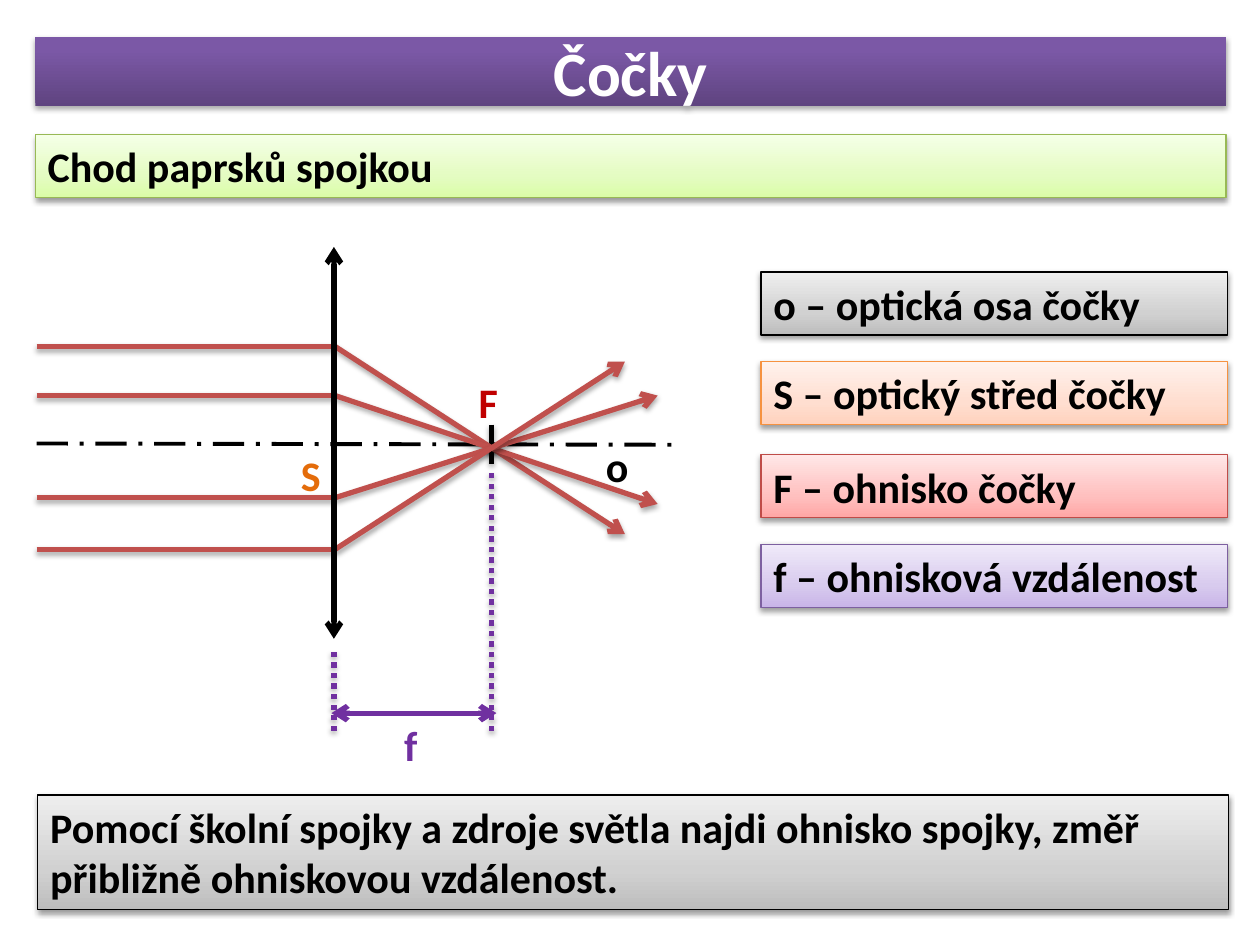
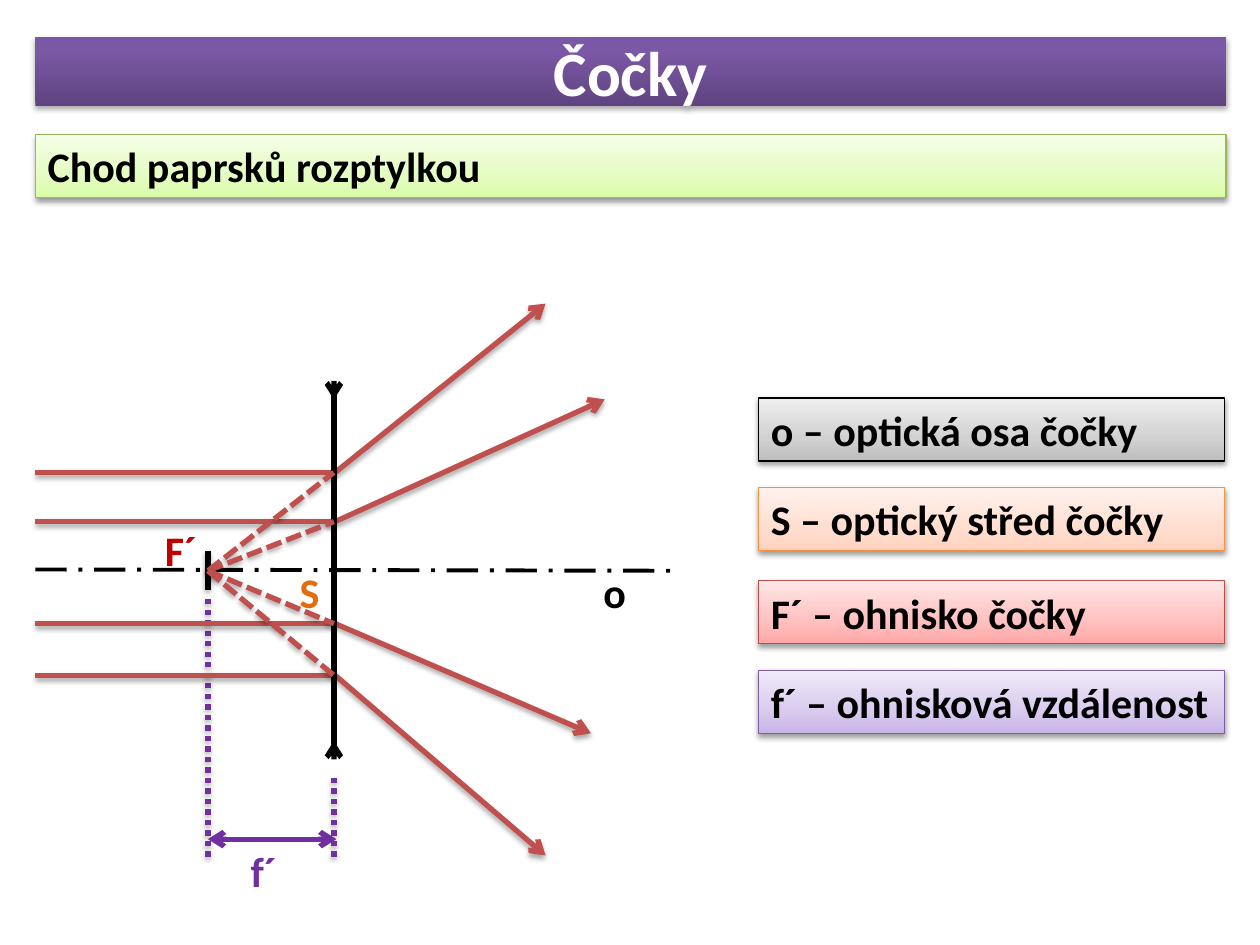
"""Build two slides on how rays pass through converging and diverging lenses."""
from pptx import Presentation
from pptx.dml.color import RGBColor
from pptx.enum.dml import MSO_LINE
from pptx.enum.shapes import MSO_CONNECTOR, MSO_SHAPE
from pptx.enum.text import MSO_ANCHOR, PP_ALIGN
from pptx.oxml import parse_xml
from pptx.oxml.ns import nsdecls, qn
from pptx.util import Inches, Pt

BLACK = RGBColor(0x00, 0x00, 0x00)
WHITE = RGBColor(0xFF, 0xFF, 0xFF)
RAY_RED = RGBColor(0xC0, 0x50, 0x4D)
FOCUS_RED = RGBColor(0xC0, 0x00, 0x00)
CENTRE_ORANGE = RGBColor(0xE4, 0x6C, 0x0A)
LENGTH_PURPLE = RGBColor(0x70, 0x30, 0xA0)
GREEN_EDGE = RGBColor(0x98, 0xB9, 0x55)
ORANGE_EDGE = RGBColor(0xF6, 0x92, 0x40)
RED_EDGE = RGBColor(0xBF, 0x4C, 0x48)
PURPLE_EDGE = RGBColor(0x7D, 0x60, 0xA0)


def gradient(middle, *colours):
    """Pair three colours, bottom to top, with their stops."""
    return list(zip((0, middle, 100), map(RGBColor.from_string, colours)))


TITLE_STYLE = (gradient(80, "5F4480", "7B58A6", "7C57A8"), None)
GREEN_STYLE = (gradient(35, "DAFDA7", "E4FCC2", "F5FFE7"), GREEN_EDGE)
GREY_STYLE = (gradient(35, "BDBDBD", "D1D1D1", "EEEEEE"), BLACK)
ORANGE_STYLE = (gradient(35, "FFD2BD", "FFDED0", "FFF2ED"), ORANGE_EDGE)
RED_STYLE = (gradient(35, "FFA6A5", "FFC0BF", "FFE7E7"), RED_EDGE)
PURPLE_STYLE = (gradient(35, "C9B5E8", "D8CBEE", "F0EAF9"), PURPLE_EDGE)

FONT = "Calibri"
TITLE = "Čočky"
BAND_LEFT, BAND_WIDTH = 0.28, 9.45
LENS_X = 2.65
RAY_OFFSETS = (-0.77, -0.38, 0.43, 0.84)
LEGEND_ROWS = (
    (-1.36, GREY_STYLE), (-0.65, ORANGE_STYLE),
    (0.09, RED_STYLE), (0.8, PURPLE_STYLE),
)

LENSES = [
    {
        "heading": "Chod paprsků spojkou",
        "axis_y": 3.52, "left": 0.29, "axis_end": 5.41, "focus_x": 3.9,
        "legend_left": 6.04,
        "legend": ("o – optická osa čočky", "S – optický střed čočky",
                   "F – ohnisko čočky", "f – ohnisková vzdálenost"),
        "backed_labels": [("S", 2.29, 3.52, CENTRE_ORANGE),
                          ("f", 3.11, 5.66, LENGTH_PURPLE)],
        "clear_labels": [("F", 3.7, 2.94, FOCUS_RED), ("o", 4.71, 3.45, BLACK)],
        "ray_tips": [(4.96, 4.24), (5.22, 4), (5.22, 3.14), (4.96, 2.87)],
        "virtual_rays": False,
        "length_ends": (2.63, 3.94),
        "lens_lines": [(5.07, 1.96, "both")],
        "task": "Pomocí školní spojky a zdroje světla najdi ohnisko spojky, "
                "změř přibližně ohniskovou vzdálenost.",
    },
    {
        "heading": "Chod paprsků rozptylkou",
        "axis_y": 4.52, "left": 0.28, "axis_end": 5.39, "focus_x": 1.65,
        "legend_left": 6.02,
        "legend": ("o – optická osa čočky", "S – optický střed čočky",
                   "F´ – ohnisko čočky", "f´ – ohnisková vzdálenost"),
        "backed_labels": [("S", 2.28, 4.45, CENTRE_ORANGE),
                          ("f´", 1.89, 6.66, LENGTH_PURPLE)],
        "clear_labels": [("F´", 1.21, 4.11, FOCUS_RED), ("o", 4.69, 4.45, BLACK)],
        "ray_tips": [(4.33, 2.41), (4.8, 3.17), (4.69, 5.82), (4.33, 6.79)],
        "virtual_rays": True,
        "length_ends": (1.65, 2.67),
        "lens_lines": [(5.92, 3.13, None), (3.09, 3.17, "end"), (5.97, 5.88, "end")],
        "task": None,
    },
]


def set_effects(item, shadow, alpha=35, distance=1.8):
    """Give an item a soft shadow below it, or none at all."""
    properties = item._element.spPr
    for effects in properties.findall(qn("a:effectLst")):
        properties.remove(effects)
    inner = (
        f'<a:outerShdw blurRad="{Pt(3.1)}" dist="{Pt(distance)}" dir="5400000" '
        f'rotWithShape="0"><a:srgbClr val="{BLACK}"><a:alpha val="{alpha * 1000}"/>'
        "</a:srgbClr></a:outerShdw>"
    ) if shadow else ""
    properties.append(parse_xml(f'<a:effectLst {nsdecls("a")}>{inner}</a:effectLst>'))


def write(box, text, colour=BLACK, size=24, align=PP_ALIGN.LEFT,
          anchor=MSO_ANCHOR.TOP):
    """Fill a box with one bold paragraph."""
    frame = box.text_frame
    frame.word_wrap = True
    frame.vertical_anchor = anchor
    para = frame.paragraphs[0]
    para.alignment = align
    span = para.add_run()
    span.text = text
    span.font.name, span.font.size, span.font.bold = FONT, Pt(size), True
    span.font.color.rgb = colour


def add_panel(page, text, left, top, width, height, style, **text_format):
    """Add a gradient rectangle with a shadow and text."""
    stops, edge = style
    box = page.shapes.add_shape(MSO_SHAPE.RECTANGLE, Inches(left), Inches(top),
                                Inches(width), Inches(height))
    box.fill.gradient()
    stop_xml = "".join(
        f'<a:gs pos="{place * 1000}"><a:srgbClr val="{colour}"/></a:gs>'
        for place, colour in stops)
    properties = box._element.spPr
    properties.replace(properties.find(qn("a:gradFill")), parse_xml(
        f'<a:gradFill {nsdecls("a")} rotWithShape="1"><a:gsLst>{stop_xml}</a:gsLst>'
        '<a:lin ang="16200000" scaled="0"/></a:gradFill>'))
    if edge is None:
        box.line.fill.background()
        set_effects(box, True)
    else:
        box.line.color.rgb = edge
        box.line.width = Pt(0.75)
        set_effects(box, True, alpha=38, distance=1.6)
    write(box, text, **text_format)


def add_label(page, text, left, top, colour, backed):
    """Add a one-letter label, on white when backed."""
    box = page.shapes.add_textbox(Inches(left), Inches(top), Inches(0.51), Inches(0.5))
    if backed:
        box.fill.solid()
        box.fill.fore_color.rgb = WHITE
    write(box, text, colour)


def add_line(page, start, end, colour, width=3, dash=None, arrows=None, shadow=True):
    """Draw a straight line; arrows is None, "end" or "both"."""
    line = page.shapes.add_connector(MSO_CONNECTOR.STRAIGHT,
                                     *map(Inches, (*start, *end)))
    line.line.color.rgb = colour
    line.line.width = Pt(width)
    if dash is not None:
        line.line.dash_style = dash
    tags = {None: (), "end": ("tailEnd",), "both": ("headEnd", "tailEnd")}[arrows]
    for tag in tags:
        line.line._get_or_add_ln().append(
            parse_xml(f'<a:{tag} {nsdecls("a")} type="arrow"/>'))
    set_effects(line, shadow)


def draw_lens(page, lens):
    """Draw the axis, focus, rays, lens and focal length."""
    axis_y, left, focus_x = lens["axis_y"], lens["left"], lens["focus_x"]
    ray_heights = [axis_y + offset for offset in RAY_OFFSETS]

    add_line(page, (left, axis_y), (lens["axis_end"], axis_y + 0.01), BLACK,
             width=2.25, dash=MSO_LINE.LONG_DASH_DOT, shadow=False)
    add_line(page, (focus_x, axis_y - 0.15), (focus_x, axis_y + 0.16), BLACK)
    for x, top in ((LENS_X, 1.62), (focus_x, 0.2)):
        add_line(page, (x, axis_y + 2.28), (x, axis_y + top), LENGTH_PURPLE,
                 dash=MSO_LINE.ROUND_DOT)
    for height, tip in zip(ray_heights, lens["ray_tips"]):
        add_line(page, (LENS_X + 0.01, height), tip, RAY_RED, arrows="end")
    length_start, length_end = lens["length_ends"]
    add_line(page, (length_start, axis_y + 2.14), (length_end, axis_y + 2.14),
             LENGTH_PURPLE, arrows="both", shadow=False)
    for height in ray_heights:
        add_line(page, (left, height), (LENS_X, height), RAY_RED)
    for start, end, arrows in lens["lens_lines"]:
        add_line(page, (LENS_X, start), (LENS_X, end), BLACK,
                 arrows=arrows, shadow=False)
    if lens["virtual_rays"]:
        for height in ray_heights:
            add_line(page, (focus_x, axis_y + 0.01), (LENS_X, height), RAY_RED,
                     dash=MSO_LINE.SQUARE_DOT)


def build_page(deck, lens):
    """Add one slide for one kind of lens."""
    page = deck.slides.add_slide(deck.slide_layouts[6])
    for label in lens["backed_labels"]:
        add_label(page, *label, backed=True)
    add_panel(page, TITLE, BAND_LEFT, 0.29, BAND_WIDTH, 0.55, TITLE_STYLE,
              colour=WHITE, size=36, align=PP_ALIGN.CENTER, anchor=MSO_ANCHOR.MIDDLE)
    add_panel(page, lens["heading"], BAND_LEFT, 1.07, BAND_WIDTH, 0.5, GREEN_STYLE)
    draw_lens(page, lens)
    for label in lens["clear_labels"]:
        add_label(page, *label, backed=False)
    for text, (offset, style) in zip(lens["legend"], LEGEND_ROWS):
        add_panel(page, text, lens["legend_left"], lens["axis_y"] + offset,
                  3.7, 0.5, style)
    if lens["task"]:
        add_panel(page, lens["task"], 0.3, 6.31, BAND_WIDTH, 0.91, GREY_STYLE)


def main():
    """Build and save the deck."""
    deck = Presentation()
    deck.slide_width, deck.slide_height = Inches(10), Inches(7.5)
    for lens in LENSES:
        build_page(deck, lens)
    deck.save("out.pptx")


if __name__ == "__main__":
    main()
